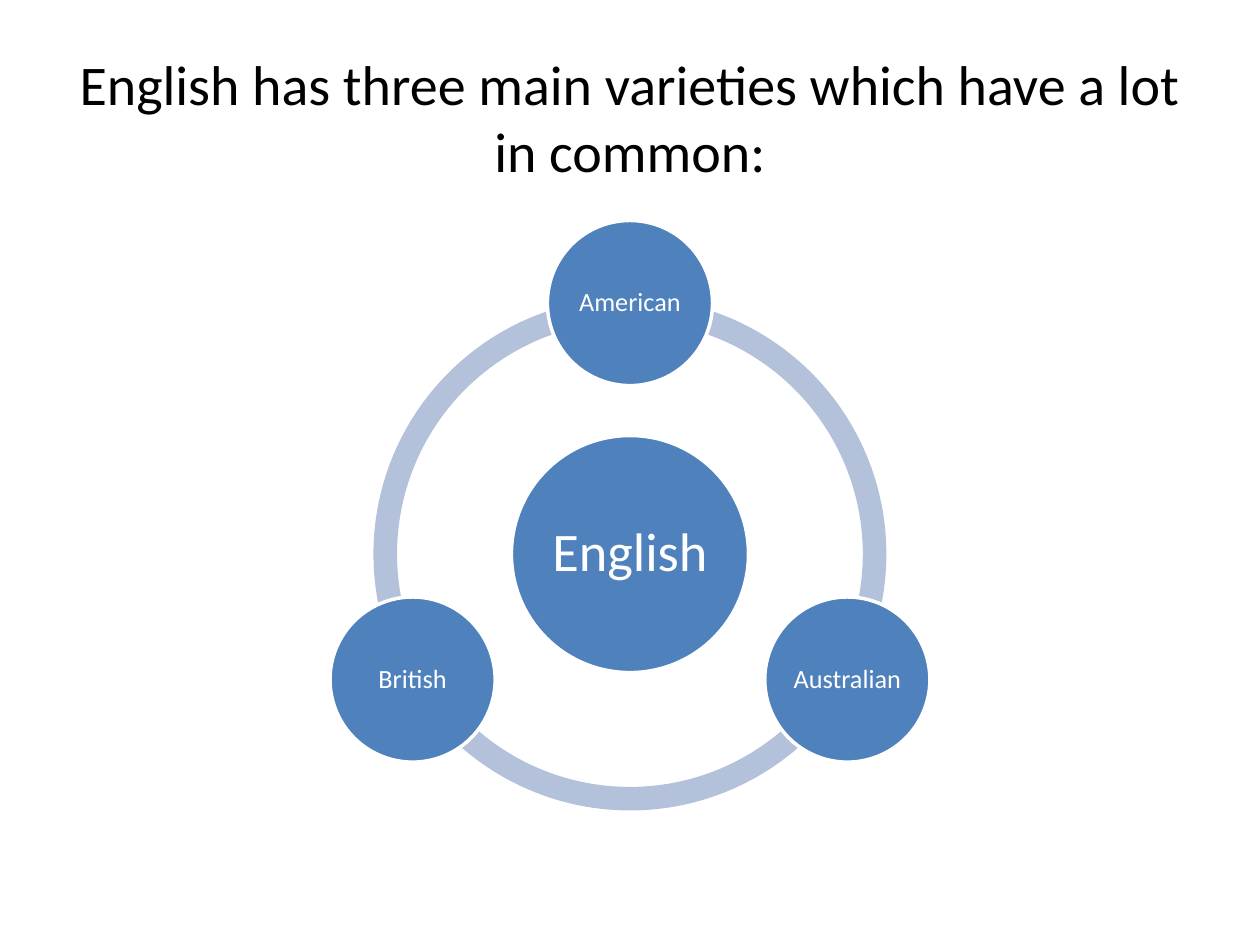
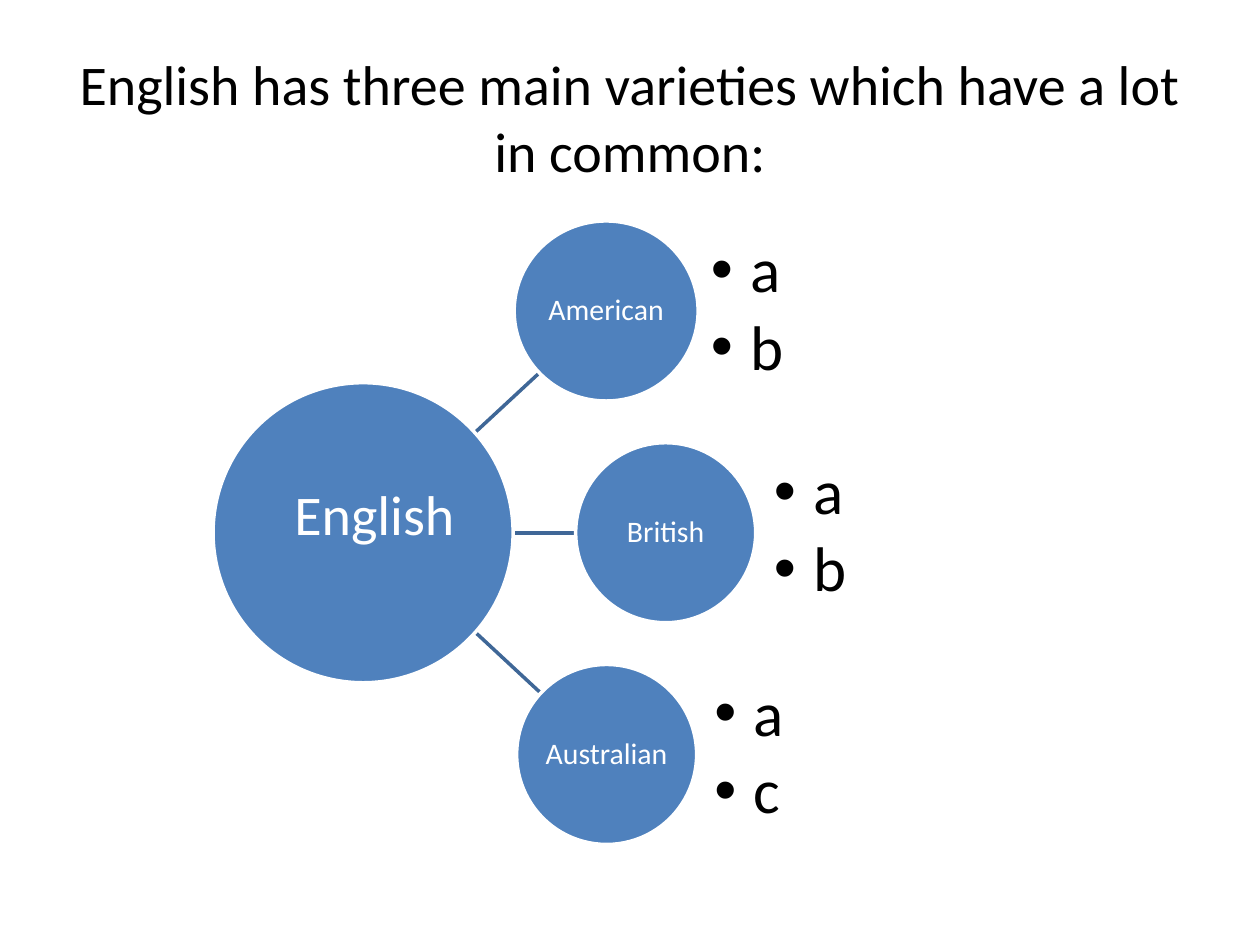
from math import cos, radians, sin

from lxml.etree import SubElement
from pptx import Presentation
from pptx.dml.color import RGBColor
from pptx.enum.shapes import MSO_CONNECTOR as LINK, MSO_SHAPE as SHAPE
from pptx.enum.text import MSO_ANCHOR as ANCHOR, MSO_AUTO_SIZE as FIT, PP_ALIGN as ALIGN
from pptx.oxml.ns import qn
from pptx.util import Cm, Pt

BLUE, PALE, LINK_BLUE, WHITE, BLACK = "4F81BD", "B3C1DB", "3F6797", "FFFFFF", "000000"
HEADING = "English has three main varieties which have a lot in common:"


def write(paragraph, text, size, color):
    run = paragraph.add_run()
    run.text = text
    run.font.name = "Calibri"
    run.font.size = Pt(size)
    run.font.bold = False
    run.font.color.rgb = RGBColor.from_string(color)


def draw(slide, kind, center_x, center_y, width, height, fill, outline=None, text="", size=15):
    shape = slide.shapes.add_shape(
        kind, Cm(center_x - width / 2), Cm(center_y - height / 2), Cm(width), Cm(height))
    shape.shadow.inherit = False
    shape.fill.solid()
    shape.fill.fore_color.rgb = RGBColor.from_string(fill)
    if outline:
        shape.line.color.rgb = RGBColor.from_string(outline)
        shape.line.width = Pt(2)
    else:
        shape.line.fill.background()
    if text:
        frame = shape.text_frame
        frame.word_wrap = False
        frame.vertical_anchor = ANCHOR.MIDDLE
        frame.margin_left = frame.margin_right = frame.margin_top = frame.margin_bottom = Cm(0.05)
        label = frame.paragraphs[0]
        label.alignment = ALIGN.CENTER
        label.line_spacing = 0.9
        write(label, text, size, WHITE)
    return shape


prs = Presentation()
prs.slide_width, prs.slide_height = Cm(25.4), Cm(19.05)
orbit = prs.slides.add_slide(prs.slide_layouts.get_by_name("Title Only"))
branches = prs.slides.add_slide(prs.slide_layouts.get_by_name("Comparison"))

for slide in (orbit, branches):
    heading = slide.shapes.title
    heading.left, heading.top, heading.width, heading.height = Cm(1.27), Cm(0.76), Cm(22.86), Cm(3.18)
    heading.text_frame.vertical_anchor = ANCHOR.MIDDLE
    heading.text_frame.paragraphs[0].alignment = ALIGN.CENTER
    write(heading.text_frame.paragraphs[0], HEADING, 32, BLACK)

orbit_x, orbit_y, orbit_radius = 12.7, 11.17, 5.06
varieties = {"American": 270, "Australian": 30, "British": 150}
for angle in varieties.values():
    arc = draw(orbit, SHAPE.BLOCK_ARC, orbit_x, orbit_y, 10.34, 10.34, PALE)
    arc.adjustments[0] = angle * 0.6
    arc.adjustments[1] = (angle + 120) % 360 * 0.6
    arc.adjustments[2] = 0.046
draw(orbit, SHAPE.OVAL, orbit_x, orbit_y, 4.78, 4.78, BLUE, WHITE, "English", 31)
for variety, angle in varieties.items():
    variety_x = orbit_x + orbit_radius * cos(radians(angle))
    variety_y = orbit_y + orbit_radius * sin(radians(angle))
    draw(orbit, SHAPE.OVAL, variety_x, variety_y, 3.33, 3.33, BLUE, WHITE, variety, 15)

english_x, english_y, row_step = 7.32, 10.74, 4.47
for start_x, start_y, end_x, end_y in (
        (9.5, 12.67, 10.9, 13.97), (9.5, 10.74, 11.61, 10.74), (9.5, 8.79, 10.87, 7.52)):
    link = branches.shapes.add_connector(
        LINK.STRAIGHT, Cm(start_x), Cm(start_y), Cm(end_x), Cm(end_y))
    link.line.color.rgb = RGBColor.from_string(LINK_BLUE)
    link.line.width = Pt(2)
    SubElement(link._element.spPr, qn("a:effectLst"))
draw(branches, SHAPE.OVAL, english_x, english_y, 6.05, 6.05, BLUE, WHITE)

rows = (
    ("American", 12.22, 3.71, 14.33, 5.56, "ab"),
    ("British", 13.42, 3.63, 15.6, 5.44, "ab"),
    ("Australian", 12.23, 3.63, 14.4, 5.44, "ac"),
)
for row, (variety, variety_x, width, traits_x, traits_width, traits) in enumerate(rows):
    variety_y = english_y + (row - 1) * row_step
    draw(branches, SHAPE.OVAL, variety_x, variety_y, width, 3.63, BLUE, WHITE, variety, 17)
    trait_list = branches.placeholders[row + 1]
    trait_list.left, trait_list.top = Cm(traits_x), Cm(variety_y - 3.63 / 2)
    trait_list.width, trait_list.height = Cm(traits_width), Cm(3.63)
    frame = trait_list.text_frame
    frame.auto_size = FIT.NONE
    frame.word_wrap = True
    frame.vertical_anchor = ANCHOR.MIDDLE
    frame.margin_left = frame.margin_right = frame.margin_top = frame.margin_bottom = 0
    for index, trait in enumerate(traits):
        item = frame.add_paragraph() if index else frame.paragraphs[0]
        item.alignment = ALIGN.LEFT
        item.line_spacing = 0.9
        item.space_before = Pt(0)
        item.space_after = Pt(5.4)
        write(item, trait, 36, BLACK)
        props = item._p.get_or_add_pPr()
        props.set("marL", str(Cm(0.79)))
        props.set("indent", str(-Cm(0.79)))
        SubElement(props, qn("a:buFont"), typeface="Arial")
        SubElement(props, qn("a:buChar"), char="•")

unused = branches.placeholders[4]._element
unused.getparent().remove(unused)

english = draw(branches, SHAPE.RECTANGLE, 7.59, 10.34, 3.81, 1.63, BLUE, None, "English", 32)
english.text_frame.word_wrap = True
english.text_frame.margin_left = Cm(0.25)
english.text_frame.paragraphs[0].alignment = ALIGN.LEFT
english.text_frame.paragraphs[0].line_spacing = 1.0

prs.save("out.pptx")
